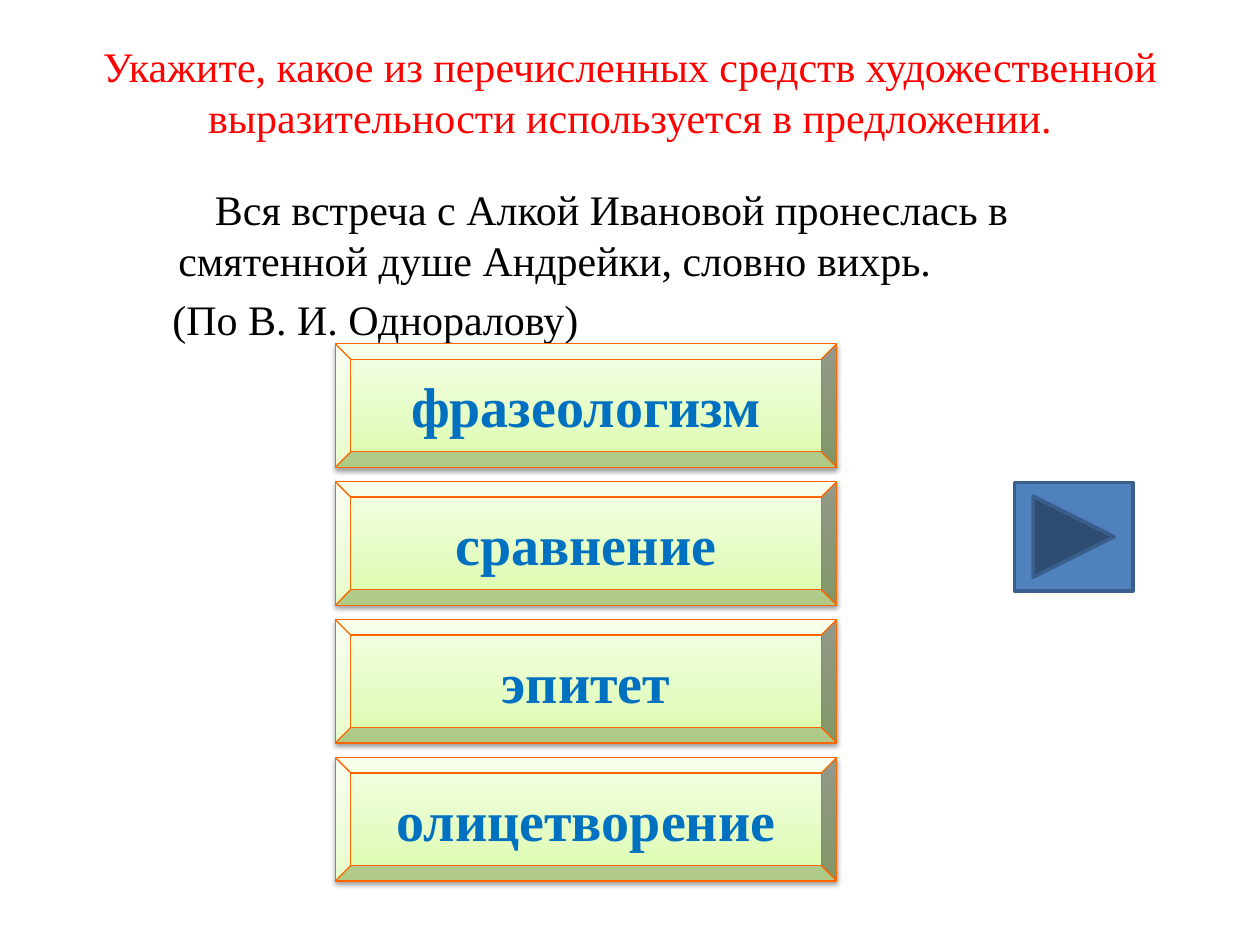
from copy import deepcopy

from lxml import etree
from pptx import Presentation
from pptx import util as u
from pptx.dml import color
from pptx.enum import shapes, text
from pptx.oxml import ns

COLORS = {
    "title": "FF0000",
    "body": "000000",
    "answer": "0070C0",
    "border": "FF6600",
    "shadow": "000000",
    "next": "4F81BD",
    "next_line": "3A5F8C",
}
GRADIENT = [(0, "DAFDA7"), (0.35, "E4FCC2"), (1, "F5FFE7")]
FONT = "Times New Roman"
ANSWERS = ["фразеологизм", "сравнение", "эпитет", "олицетворение"]


def rgb(name):
    return color.RGBColor.from_string(COLORS[name])


def place(sp, left, top, width, height):
    sp.left, sp.top = u.Cm(left), u.Cm(top)
    sp.width, sp.height = u.Cm(width), u.Cm(height)


def write(p, content, *, size=24, fill="body", bold=False, align=None, before=0):
    p.alignment = align
    p.space_before = u.Pt(before)
    r = p.add_run()
    r.text = content
    r.font.name = FONT
    r.font.size = u.Pt(size)
    r.font.bold = bold
    r.font.color.rgb = rgb(fill)


def add_title(s, content):
    sp = s.shapes.title
    place(sp, 1.27, 0.05, 22.86, 3.58)
    tf = sp.text_frame
    tf.vertical_anchor = text.MSO_ANCHOR.MIDDLE
    write(tf.paragraphs[0], content, fill="title", align=text.PP_ALIGN.CENTER)


def add_body(s, items):
    sp = s.placeholders[1]
    place(sp, 2.39, 3.58, 21.74, 13.44)
    tf = sp.text_frame
    for i, (content, indent) in enumerate(items):
        p = tf.add_paragraph() if i else tf.paragraphs[0]
        pPr = p._p.get_or_add_pPr()
        pPr.set("marL", str(u.Cm(0.95)))
        pPr.set("indent", str(u.Cm(indent)))
        etree.SubElement(pPr, ns.qn("a:buNone"))
        write(p, content, before=5 if i else 0, align=text.PP_ALIGN.LEFT)


def fill_gradient(sp):
    sp.fill.gradient()
    sp.fill.gradient_angle = 90
    stops = sp._element.spPr.find(".//" + ns.qn("a:gsLst"))
    stops.append(deepcopy(stops[-1]))
    for stop, (position, value) in zip(sp.fill.gradient_stops, GRADIENT):
        stop.position = position
        stop.color.rgb = color.RGBColor.from_string(value)


def add_shadow(sp):
    sp.shadow.inherit = False
    effects = sp._element.spPr.find(ns.qn("a:effectLst"))
    shadow = etree.SubElement(
        effects, ns.qn("a:outerShdw"),
        blurRad=str(u.Pt(3.1)), dist=str(u.Pt(1.6)), dir="5400000", rotWithShape="0",
    )
    tint = etree.SubElement(shadow, ns.qn("a:srgbClr"), val=COLORS["shadow"])
    etree.SubElement(tint, ns.qn("a:alpha"), val="38000")


def add_answer(s, content, top):
    sp = s.shapes.add_shape(
        shapes.MSO_SHAPE.BEVEL, u.Cm(6.76), u.Cm(top), u.Cm(10.11), u.Cm(2.49))
    fill_gradient(sp)
    sp.line.color.rgb = rgb("border")
    sp.line.width = u.Pt(0.75)
    add_shadow(sp)
    tf = sp.text_frame
    tf.word_wrap = True
    tf.vertical_anchor = text.MSO_ANCHOR.MIDDLE
    write(tf.paragraphs[0], content, size=32, fill="answer", bold=True,
          align=text.PP_ALIGN.CENTER)


def add_next_button(s):
    sp = s.shapes.add_shape(
        shapes.MSO_SHAPE.ACTION_BUTTON_FORWARD_OR_NEXT,
        u.Cm(20.45), u.Cm(9.73), u.Cm(2.39), u.Cm(2.18))
    sp.shadow.inherit = False
    sp.fill.solid()
    sp.fill.fore_color.rgb = rgb("next")
    sp.line.color.rgb = rgb("next_line")
    sp.line.width = u.Pt(2)


def main():
    prs = Presentation()
    prs.slide_width, prs.slide_height = u.Cm(25.4), u.Cm(19.05)
    s = prs.slides.add_slide(prs.slide_layouts[1])
    add_title(s, "Укажите, какое из перечисленных средств художественной "
                 "выразительности используется в предложении.")
    add_body(s, [
        ("Вся встреча с Алкой Ивановой пронеслась в смятенной душе Андрейки, "
         "словно вихрь.", 0.74),
        ("(По В. И. Одноралову)", -0.12),
    ])
    for i, answer in enumerate(ANSWERS):
        add_answer(s, answer, 6.93 + i * 2.78)
    add_next_button(s)
    prs.save("out.pptx")


if __name__ == "__main__":
    main()
